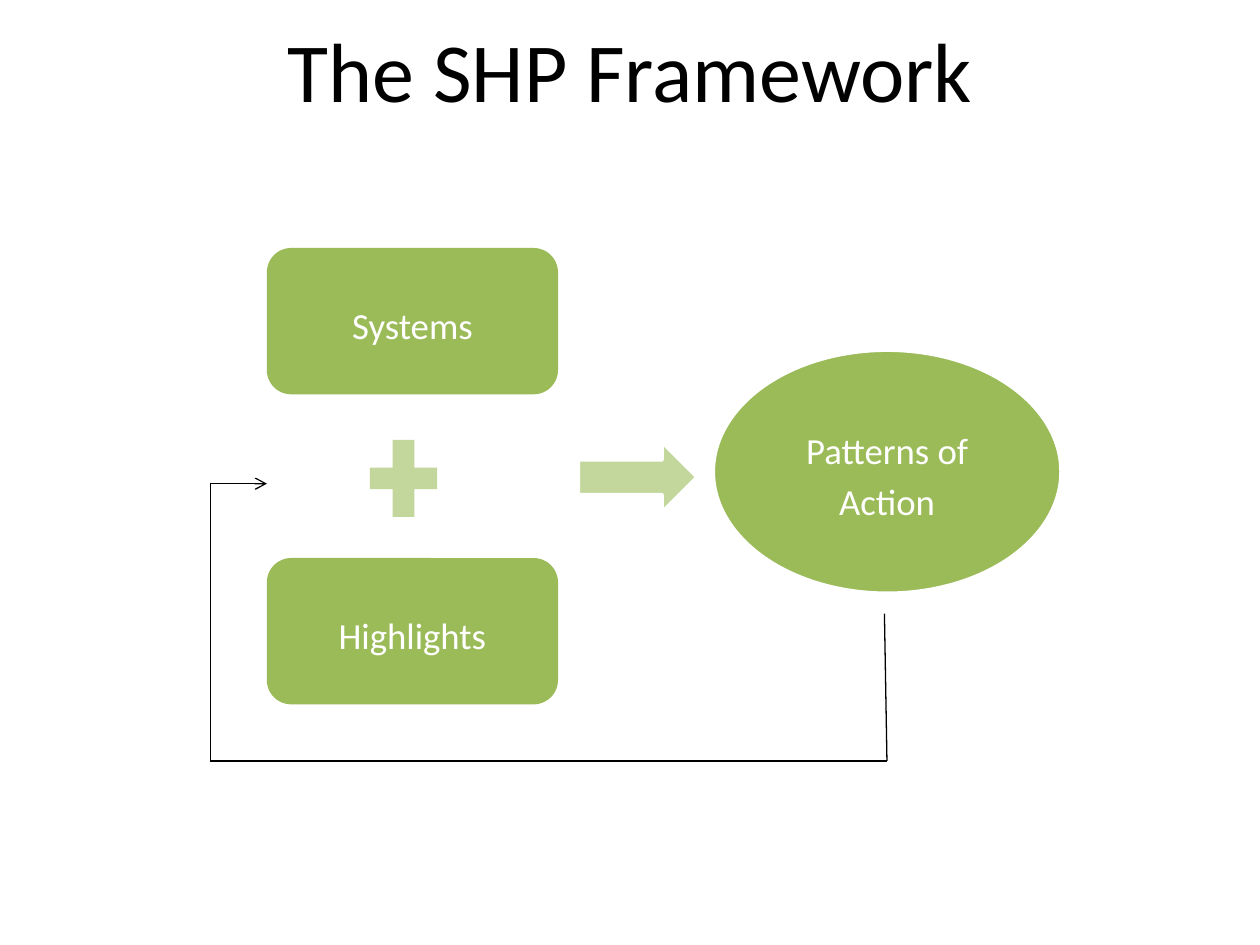
from itertools import pairwise

from lxml.etree import SubElement
from pptx import Presentation
from pptx.dml.color import RGBColor
from pptx.enum.shapes import MSO_CONNECTOR, MSO_SHAPE
from pptx.enum.text import MSO_ANCHOR, PP_ALIGN
from pptx.oxml.ns import qn
from pptx.util import Cm, Pt

COLORS = {"green": "9BBB59", "pale": "C3D69B", "white": "FFFFFF", "black": "000000"}
FONT = "Calibri"

TITLE = "The SHP Framework"
TITLE_BOX = (1.27, -0.2, 22.86, 3.18)
INPUTS = ["Systems", "Highlights"]
INPUT_LEFT, INPUT_TOP, INPUT_WIDTH, INPUT_HEIGHT, INPUT_PITCH = 5.38, 5, 5.87, 2.95, 6.25
OUTCOME = "Patterns of Action"
OUTCOME_BOX = (14.38, 7.06, 7.01, 4.9)
PLUS_BOX = (7.21, 8.59, 1.85, 2.11)
ARROW_BOX = (11.66, 8.92, 2.39, 1.4)
FEEDBACK = [(17.83, 12.37), (17.88, 15.34), (4.24, 15.34), (4.24, 9.75), (INPUT_LEFT, 9.75)]


def rgb(name):
    return RGBColor.from_string(COLORS[name])


def write(frame, text, size, color, spacing=None):
    frame.word_wrap = True
    frame.vertical_anchor = MSO_ANCHOR.MIDDLE
    paragraph = frame.paragraphs[0]
    paragraph.alignment = PP_ALIGN.CENTER
    paragraph.line_spacing = spacing
    run = paragraph.add_run()
    run.text = text
    run.font.size = Pt(size)
    run.font.name = FONT
    run.font.color.rgb = rgb(color)


def add_part(slide, preset, box, fill, text=None, outlined=False):
    part = slide.shapes.add_shape(preset, *map(Cm, box))
    part.shadow.inherit = False
    part.fill.solid()
    part.fill.fore_color.rgb = rgb(fill)
    if outlined:
        part.line.color.rgb = rgb("white")
        part.line.width = Pt(2)
    else:
        part.line.fill.background()
    if text:
        write(part.text_frame, text, 21, "white", 1.15)


def add_segment(slide, start, end):
    segment = slide.shapes.add_connector(MSO_CONNECTOR.STRAIGHT, *map(Cm, start + end))
    segment.line.color.rgb = rgb("black")
    segment.line.width = Pt(0.75)
    SubElement(segment._element.spPr, qn("a:effectLst"))
    return segment


def main():
    deck = Presentation()
    deck.slide_width, deck.slide_height = Cm(25.4), Cm(19.05)
    slide = deck.slides.add_slide(deck.slide_layouts[6])

    title = slide.shapes.add_textbox(*map(Cm, TITLE_BOX))
    write(title.text_frame, TITLE, 48, "black")

    for index, label in enumerate(INPUTS):
        box = (INPUT_LEFT, INPUT_TOP + index * INPUT_PITCH, INPUT_WIDTH, INPUT_HEIGHT)
        add_part(slide, MSO_SHAPE.ROUNDED_RECTANGLE, box, "green", label)
    add_part(slide, MSO_SHAPE.OVAL, OUTCOME_BOX, "green", OUTCOME, outlined=True)
    add_part(slide, MSO_SHAPE.MATH_PLUS, PLUS_BOX, "pale")
    add_part(slide, MSO_SHAPE.RIGHT_ARROW, ARROW_BOX, "pale", outlined=True)

    segments = [add_segment(slide, start, end) for start, end in pairwise(FEEDBACK)]
    SubElement(segments[-1].line._get_or_add_ln(), qn("a:tailEnd"), type="arrow")

    deck.save("out.pptx")


if __name__ == "__main__":
    main()
